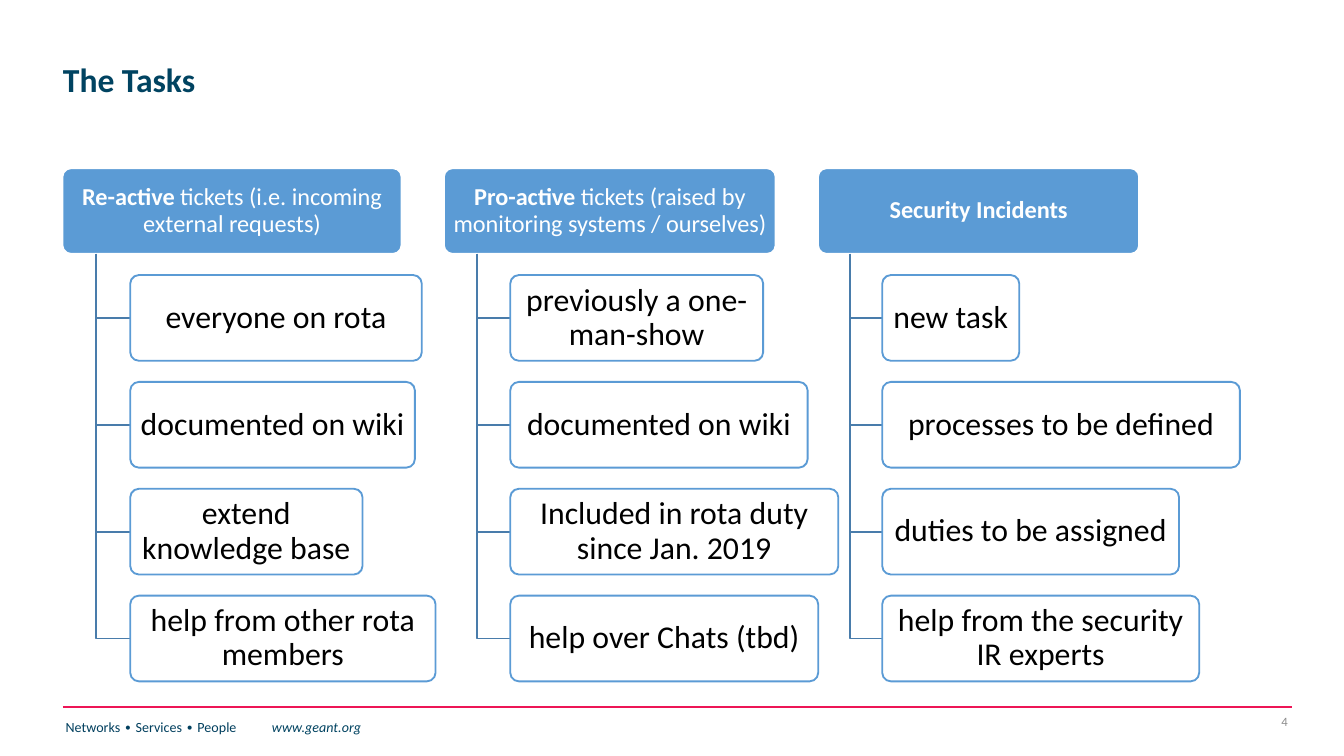
from lxml import etree
from pptx import Presentation
from pptx import util as u
from pptx.dml.color import RGBColor
from pptx.enum import shapes, text
from pptx.oxml.ns import qn

Cm = u.Cm
COLORS = {
    "navy": "004361", "footer": "003F5E", "red": "ED1556", "blue": "5B9BD5",
    "link": "497CAB", "white": "FFFFFF", "black": "000000", "gray": "8C8C8C",
}
TOP, ROW, BOX_H = 3.18, 2.02, 1.62

# left, header width, header runs (text, bold), tasks (width, text)
COLUMNS = [
    (1.18, 6.41,
     [("Re-active", True), (" tickets (i.e. incoming external requests)", False)],
     [(5.51, "everyone on rota"), (5.38, "documented on wiki"),
      (4.39, "extend knowledge base"), (5.77, "help from other rota members")]),
    (8.39, 6.27,
     [("Pro-active", True),
      (" tickets (raised by monitoring systems / ourselves)", False)],
     [(4.78, "previously a one-man-show"), (5.62, "documented on wiki"),
      (6.2, "Included in rota duty since Jan. 2019"),
      (5.82, "help over Chats (tbd)")]),
    (15.46, 6.07,
     [("Security Incidents", True)],
     [(2.59, "new task"), (6.76, "processes to be defined"),
      (5.61, "duties to be assigned"), (5.99, "help from the security IR experts")]),
]


def rgb(name):
    return RGBColor.from_string(COLORS[name])


class Deck:
    def __init__(self):
        self.prs = Presentation()
        self.prs.slide_width, self.prs.slide_height = Cm(25.4), Cm(14.29)
        self.s = self.prs.slides.add_slide(self.prs.slide_layouts[6])
        self.font = "Calibri"

    def add_text(self, sp, runs, size, align, spacing=0.9,
                 anchor=text.MSO_ANCHOR.MIDDLE):
        """Fill a shape with one paragraph; runs are (text, colour, bold, italic)."""
        tf = sp.text_frame
        tf.word_wrap = True
        tf.vertical_anchor = anchor
        p = tf.paragraphs[0]
        p.alignment, p.line_spacing = align, spacing
        for words, color, bold, italic in runs:
            r = p.add_run()
            r.text = words
            r.font.name, r.font.size = self.font, u.Pt(size)
            r.font.bold, r.font.italic = bold, italic
            r.font.color.rgb = rgb(color)
        return p

    def label(self, x, y, w, h, runs, size, align=text.PP_ALIGN.LEFT, **style):
        sp = self.s.shapes.add_textbox(Cm(x), Cm(y), Cm(w), Cm(h))
        return self.add_text(sp, runs, size, align, **style)

    def box(self, x, y, w, runs, size, fill, line, alpha=None):
        sp = self.s.shapes.add_shape(shapes.MSO_SHAPE.ROUNDED_RECTANGLE,
                                     Cm(x), Cm(y), Cm(w), Cm(BOX_H))
        sp.adjustments[0] = 0.1
        sp.shadow.inherit = False
        sp.fill.solid()
        sp.fill.fore_color.rgb = rgb(fill)
        if alpha:
            color = sp._element.spPr.find(qn("a:solidFill")).find(qn("a:srgbClr"))
            etree.SubElement(color, qn("a:alpha"), val=str(alpha * 1000))
        sp.line.color.rgb, sp.line.width = rgb(line), u.Pt(1)
        tf = sp.text_frame
        tf.margin_left = tf.margin_right = Cm(0.12)
        tf.margin_top = tf.margin_bottom = Cm(0.1)
        self.add_text(sp, runs, size, text.PP_ALIGN.CENTER)

    def elbow(self, x, y, x2, y2):
        """Line running down from (x, y), then right to (x2, y2)."""
        fb = self.s.shapes.build_freeform(Cm(x), Cm(y))
        fb.add_line_segments([(Cm(x), Cm(y2)), (Cm(x2), Cm(y2))], close=False)
        sp = fb.convert_to_shape()
        sp.shadow.inherit = False
        sp.fill.background()
        sp.line.color.rgb, sp.line.width = rgb("link"), u.Pt(1)

    def rule(self, x, y, x2):
        ln = self.s.shapes.add_connector(shapes.MSO_CONNECTOR.STRAIGHT,
                                         Cm(x), Cm(y), Cm(x2), Cm(y))
        ln.line.color.rgb, ln.line.width = rgb("red"), u.Pt(1)
        etree.SubElement(ln._element.spPr, qn("a:effectLst"))

    def column(self, x, w, header, tasks):
        """Header box with its tasks hanging below, indented by a fifth of its width."""
        self.box(x, TOP, w, [(t, "white", b, False) for t, b in header],
                 13, "blue", "white")
        task_x = x + w / 5
        for i, (task_w, words) in enumerate(tasks, 1):
            y = TOP + i * ROW
            self.elbow(x + w / 10, TOP + BOX_H, task_x, y + BOX_H / 2)
            self.box(task_x, y, task_w, [(words, "black", False, False)],
                     17, "white", "blue", alpha=90)


def main():
    d = Deck()
    d.rule(1.19, 13.36, 24.41)
    p = d.label(0.99, 13.46, 8.66, 0.89,
                [("Networks ∙ Services ∙ People\t", "footer", False, False),
                 ("www.geant.org", "navy", False, True)],
                7.5, spacing=1.0, anchor=text.MSO_ANCHOR.TOP)
    tabs = etree.SubElement(p._p.get_or_add_pPr(), qn("a:tabLst"))
    etree.SubElement(tabs, qn("a:tab"), pos=str(Cm(3.9)), algn="l")
    for column in COLUMNS:
        d.column(*column)
    d.label(23.04, 13.34, 1.55, 0.58, [("4", "gray", False, False)], 6.8,
            text.PP_ALIGN.RIGHT, spacing=1.0)
    d.label(0.94, 0.15, 20.02, 2.77, [("The Tasks", "navy", True, False)], 18)
    d.prs.save("out.pptx")


if __name__ == "__main__":
    main()
